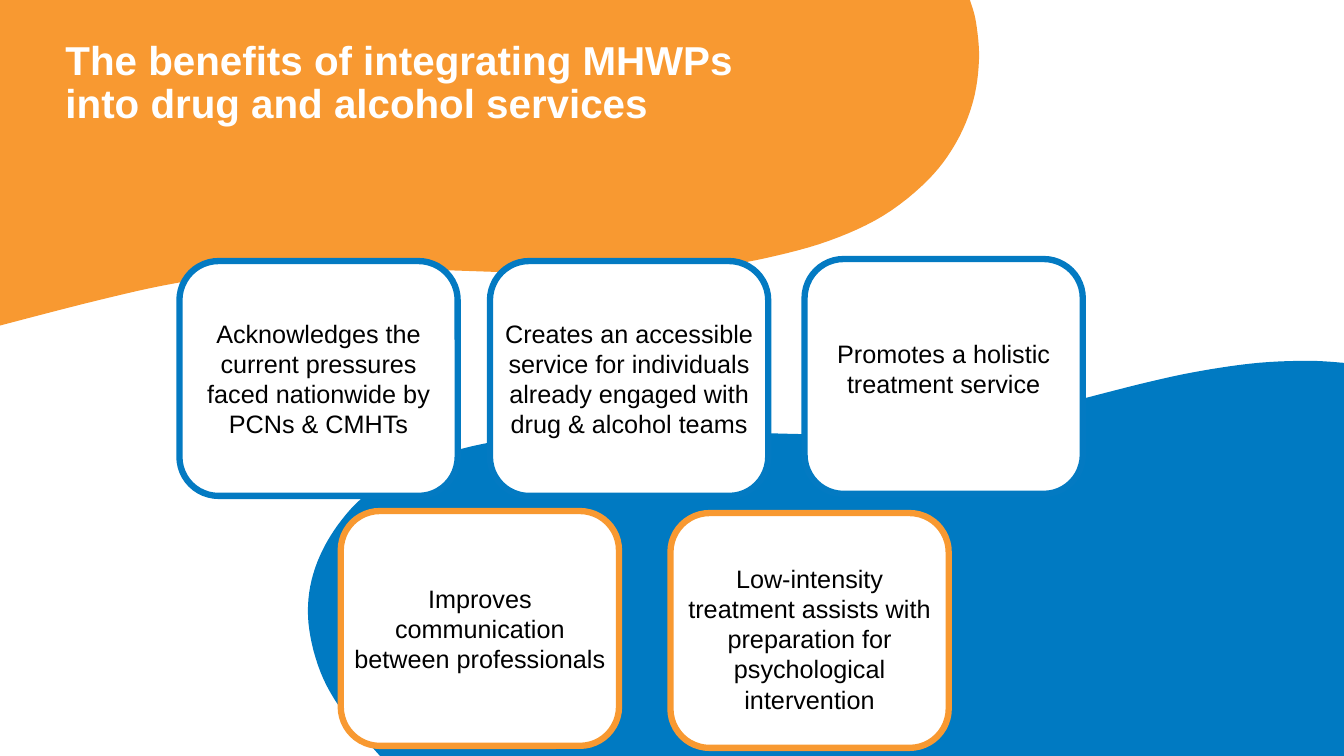
from dataclasses import dataclass

from pptx import Presentation
from pptx.dml.color import RGBColor
from pptx.enum.shapes import MSO_SHAPE
from pptx.enum.text import MSO_ANCHOR, PP_ALIGN
from pptx.util import Inches, Pt


@dataclass(frozen=True)
class Theme:
    font: str = "Arial"
    orange: RGBColor = RGBColor(0xF8, 0x99, 0x31)
    blue: RGBColor = RGBColor(0x00, 0x7A, 0xC2)
    card_blue: RGBColor = RGBColor(0x03, 0x7A, 0xC2)
    white: RGBColor = RGBColor(0xFF, 0xFF, 0xFF)
    black: RGBColor = RGBColor(0x00, 0x00, 0x00)
    title_size: float = 28.8
    card_size: float = 18
    card_border: float = 4.5


THEME = Theme()
PAGE_WIDTH, PAGE_HEIGHT = 13.33, 7.5
CARD_WIDTH, CARD_HEIGHT = 2.76, 2.33
CURVE_STEPS = 6

ORANGE_EDGE = [
    (0, 3.23), (0.97, 2.98), (1.74, 2.81), (2.54, 2.7), (3.41, 2.66),
    (4.06, 2.67), (5.29, 2.71), (5.88, 2.72), (6.54, 2.7), (7.02, 2.66),
    (7.6, 2.56), (8.22, 2.39), (8.76, 2.14), (9.2, 1.79), (9.48, 1.42),
    (9.65, 1.01), (9.71, 0.59), (9.68, 0.22), (9.62, 0),
]
BLUE_EDGE = [
    (0.71, 3.92), (0.39, 3.55), (0.15, 3.16), (0.02, 2.74), (0, 2.36),
    (0.09, 1.99), (0.29, 1.63), (0.58, 1.32), (1.01, 1.06), (1.53, 0.87),
    (2.17, 0.75), (2.74, 0.7), (3.25, 0.69), (3.68, 0.69), (4.62, 0.72),
    (5.19, 0.73), (5.77, 0.72), (6.34, 0.67), (6.92, 0.57), (7.47, 0.43),
    (8.29, 0.22), (8.85, 0.1), (9.42, 0.02), (9.93, 0), (10.27, 0.02),
]
CARDS = [
    (1.78, 2.59, THEME.card_blue, 0,
     "Acknowledges the current pressures faced nationwide by PCNs &\u00a0CMHTs"),
    (4.86, 2.59, THEME.card_blue, 0,
     "Creates an accessible service for individuals already engaged with drug & alcohol teams"),
    (7.98, 2.57, THEME.card_blue, -0.08, "Promotes a holistic treatment service"),
    (3.38, 5.07, THEME.orange, 0, "Improves communication between professionals"),
    (6.65, 5.09, THEME.orange, 0.08,
     "Low-intensity treatment\u00a0assists with preparation for psychological intervention"),
]


def smooth(knots):
    padded = [knots[0], *knots, knots[-1]]
    points = [knots[0]]
    for before, start, end, after in zip(padded, padded[1:], padded[2:], padded[3:]):
        for step in range(1, CURVE_STEPS + 1):
            t = step / CURVE_STEPS
            points.append(tuple(
                b + 0.5 * t * (c - a + t * (2 * a - 5 * b + 4 * c - d + t * (3 * (b - c) + d - a)))
                for a, b, c, d in zip(before, start, end, after)
            ))
    return points


def add_wave(page, left, top, edge, corner, color):
    outline = [
        (Inches(left + x), Inches(top + y)) for x, y in [*smooth(edge), corner]
    ]
    builder = page.shapes.build_freeform(*outline[0])
    builder.add_line_segments(outline[1:], close=True)
    wave = builder.convert_to_shape()
    wave.shadow.inherit = False
    wave.fill.solid()
    wave.fill.fore_color.rgb = color
    wave.line.fill.background()


def write_text(frame, text, size, color):
    frame.word_wrap = True
    frame.margin_left = frame.margin_right = 0
    frame.margin_top = frame.margin_bottom = 0
    paragraph = frame.paragraphs[0]
    paragraph.text = text
    paragraph.font.name = THEME.font
    paragraph.font.size = Pt(size)
    paragraph.font.color.rgb = color
    return paragraph


def add_title(page, left, top, width, height):
    box = page.shapes.add_textbox(Inches(left), Inches(top), Inches(width), Inches(height))
    paragraph = write_text(
        box.text_frame,
        "The benefits of integrating MHWPs into\u00a0drug and alcohol services",
        THEME.title_size, THEME.white,
    )
    paragraph.font.bold = True
    paragraph.line_spacing = 0.9


def add_card(page, left, top, border, text_shift, text):
    card = page.shapes.add_shape(
        MSO_SHAPE.ROUNDED_RECTANGLE,
        Inches(left), Inches(top), Inches(CARD_WIDTH), Inches(CARD_HEIGHT),
    )
    card.shadow.inherit = False
    card.fill.solid()
    card.fill.fore_color.rgb = THEME.white
    card.line.color.rgb = border
    card.line.width = Pt(THEME.card_border)
    frame = card.text_frame
    paragraph = write_text(frame, text, THEME.card_size, THEME.black)
    paragraph.alignment = PP_ALIGN.CENTER
    frame.vertical_anchor = MSO_ANCHOR.MIDDLE
    frame.margin_top = Inches(max(2 * text_shift, 0))
    frame.margin_bottom = Inches(max(-2 * text_shift, 0))


def build_benefits_page(deck):
    page = deck.slides.add_slide(deck.slide_layouts[6])
    add_wave(page, 0, 0, ORANGE_EDGE, (0, 0), THEME.orange)
    add_wave(page, 3.06, 3.58, BLUE_EDGE, (10.27, 3.92), THEME.blue)
    add_title(page, 0.65, 0.4, 7.24, 0.69)
    for card in CARDS:
        add_card(page, *card)


def main():
    deck = Presentation()
    deck.slide_width = Inches(PAGE_WIDTH)
    deck.slide_height = Inches(PAGE_HEIGHT)
    build_benefits_page(deck)
    deck.save("out.pptx")


if __name__ == "__main__":
    main()
